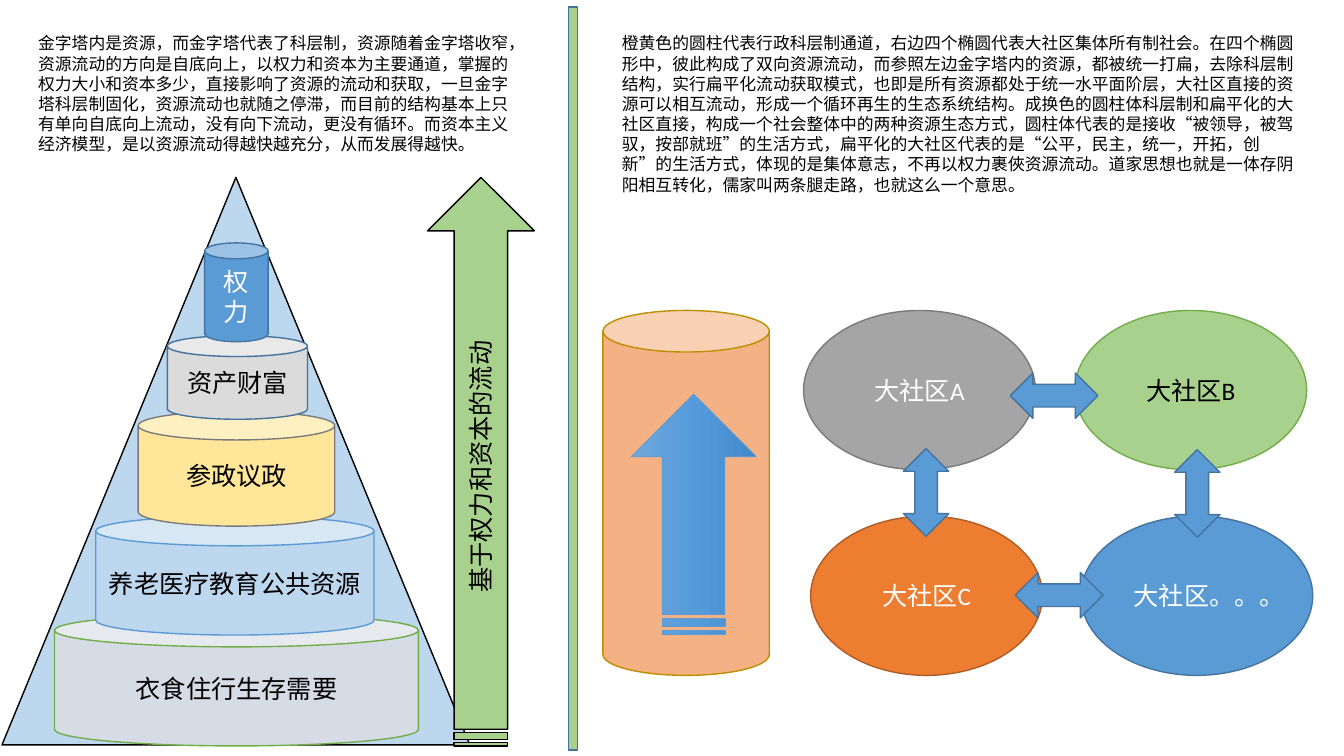
from lxml import etree
from pptx import Presentation
from pptx.dml.color import RGBColor
from pptx.enum import shapes, text
from pptx.oxml import ns
from pptx.util import Inches, Pt

COLORS = {
    "black": "000000", "white": "FFFFFF", "pale_blue": "BDD7EE", "slate": "D6DCE5",
    "yellow": "FFE699", "silver": "DBDBDB", "blue": "5B9BD5", "navy": "43739E",
    "lime": "A9D18E", "green": "70AD47", "gray": "A5A5A5", "dark_gray": "7A7A7A",
    "peach": "F4B183", "gold": "BD8E00", "orange": "ED7D31", "rust": "AF5C24",
}
FONT = "Calibri"
KIND = shapes.MSO_SHAPE

PYRAMID = (0.02, 1.76, 4.64, 5.63)
LAYERS = [
    ("衣食住行生存需要", (0.54, 6.09, 3.61, 1.31), "slate", "green", "black"),
    ("养老医疗教育公共资源", (0.95, 5.12, 2.76, 1.18), "pale_blue", "blue", "black"),
    ("参政议政", (1.37, 4.08, 1.95, 1.14), "yellow", "dark_gray", "black"),
    ("资产财富", (1.66, 3.33, 1.39, 0.83), "silver", "navy", "black"),
    ("权力", (2.03, 2.41, 0.63, 0.98), "blue", "navy", "white"),
]
FLOW = ("基于权力和资本的流动", (1.95, 4.05, 5.64, 1.06))
DIVIDER = (5.64, 0.07, 0.09, 7.37)
CYLINDER = (5.98, 3.08, 1.65, 3.62)
CHANNEL = (5.69, 4.48, 2.38, 1.24)
CHANNEL_STOPS = [(0, "71A6DB"), (50, "559BDB"), (100, "448ACA")]

OVAL_SIZE = (2.3, 1.58)
COMMUNITIES = [
    ("大社区C", (8.04, 5.12), "orange", "rust", "white"),
    ("大社区A", (7.97, 3.08), "gray", "dark_gray", "white"),
    ("大社区。。。", (10.72, 5.12), "blue", "navy", "white"),
    ("大社区B", (10.66, 3.08), "lime", "green", "black"),
]
EXCHANGE_SIZE = (0.87, 0.45)
EXCHANGES = [((10.02, 3.7), 0), ((10.07, 5.68), 0), ((8.75, 4.66), 270), ((11.44, 4.67), 270)]

NOTES = [
    ((0.28, 0.28, 5.01, 1.31),
     "金字塔内是资源，而金字塔代表了科层制，资源随着金字塔收窄，资源流动的方向是自底向上，"
     "以权力和资本为主要通道，掌握的权力大小和资本多少，直接影响了资源的流动和获取，"
     "一旦金字塔科层制固化，资源流动也就随之停滞，而目前的结构基本上只有单向自底向上流动，"
     "没有向下流动，更没有循环。而资本主义经济模型，是以资源流动得越快越充分，从而发展得越快。"),
    ((6.07, 0.28, 6.95, 1.72),
     "橙黄色的圆柱代表行政科层制通道，右边四个椭圆代表大社区集体所有制社会。"
     "在四个椭圆形中，彼此构成了双向资源流动，而参照左边金字塔内的资源，都被统一打扁，"
     "去除科层制结构，实行扁平化流动获取模式，也即是所有资源都处于统一水平面阶层，"
     "大社区直接的资源可以相互流动，形成一个循环再生的生态系统结构。"
     "成换色的圆柱体科层制和扁平化的大社区直接，构成一个社会整体中的两种资源生态方式，"
     "圆柱体代表的是接收“被领导，被驾驭，按部就班”的生活方式，"
     "扁平化的大社区代表的是“公平，民主，统一，开拓，创新”的生活方式，"
     "体现的是集体意志，不再以权力裹俠资源流动。"
     "道家思想也就是一体存阴阳相互转化，儒家叫两条腿走路，也就这么一个意思。"),
]


def rgb(name):
    return RGBColor.from_string(COLORS[name])


def write(box, words, size, color, align):
    frame = box.text_frame
    frame.word_wrap = True
    para = frame.paragraphs[0]
    para.alignment = align
    span = para.add_run()
    span.text = words
    span.font.size = Pt(size)
    span.font.name = FONT
    span.font.color.rgb = rgb(color)


def add_figure(page, kind, place, fill, line, words="", color="black", turn=0, weight=1):
    figure = page.shapes.add_shape(kind, *map(Inches, place))
    figure.shadow.inherit = False
    figure.rotation = turn
    figure.fill.solid()
    figure.fill.fore_color.rgb = rgb(fill)
    figure.line.color.rgb = rgb(line)
    figure.line.width = Pt(weight)
    if words:
        figure.text_frame.vertical_anchor = text.MSO_ANCHOR.MIDDLE
        write(figure, words, 18, color, text.PP_ALIGN.CENTER)
    return figure


def shade(figure, stops, angle):
    gradient = etree.Element(ns.qn("a:gradFill"), rotWithShape="1")
    stop_list = etree.SubElement(gradient, ns.qn("a:gsLst"))
    for percent, color in stops:
        stop = etree.SubElement(stop_list, ns.qn("a:gs"), pos=str(percent * 1000))
        etree.SubElement(stop, ns.qn("a:srgbClr"), val=color)
    etree.SubElement(gradient, ns.qn("a:lin"), ang=str(angle * 60000), scaled="0")
    properties = figure.element.spPr
    properties.replace(properties.find(ns.qn("a:solidFill")), gradient)


def main():
    deck = Presentation()
    deck.slide_width, deck.slide_height = Inches(13.33), Inches(7.5)
    page = deck.slides.add_slide(deck.slide_layouts[6])

    add_figure(page, KIND.FLOWCHART_EXTRACT, PYRAMID, "pale_blue", "black")
    for words, place, fill, line, color in LAYERS:
        add_figure(page, KIND.CAN, place, fill, line, words, color)
    words, place = FLOW
    add_figure(page, KIND.STRIPED_RIGHT_ARROW, place, "lime", "black", words, turn=270)

    add_figure(page, KIND.RECTANGLE, DIVIDER, "lime", "navy")
    add_figure(page, KIND.CAN, CYLINDER, "peach", "gold")
    for words, corner, fill, line, color in COMMUNITIES:
        add_figure(page, KIND.OVAL, corner + OVAL_SIZE, fill, line, words, color)
    for corner, turn in EXCHANGES:
        add_figure(page, KIND.LEFT_RIGHT_ARROW, corner + EXCHANGE_SIZE, "blue", "navy", turn=turn)
    channel = add_figure(page, KIND.STRIPED_RIGHT_ARROW, CHANNEL, "blue", "blue",
                         turn=270, weight=0.5)
    shade(channel, CHANNEL_STOPS, 90)

    for place, words in NOTES:
        box = page.shapes.add_textbox(*map(Inches, place))
        write(box, words, 12, "black", text.PP_ALIGN.LEFT)
        box.text_frame.auto_size = text.MSO_AUTO_SIZE.SHAPE_TO_FIT_TEXT

    deck.save("out.pptx")


if __name__ == "__main__":
    main()
